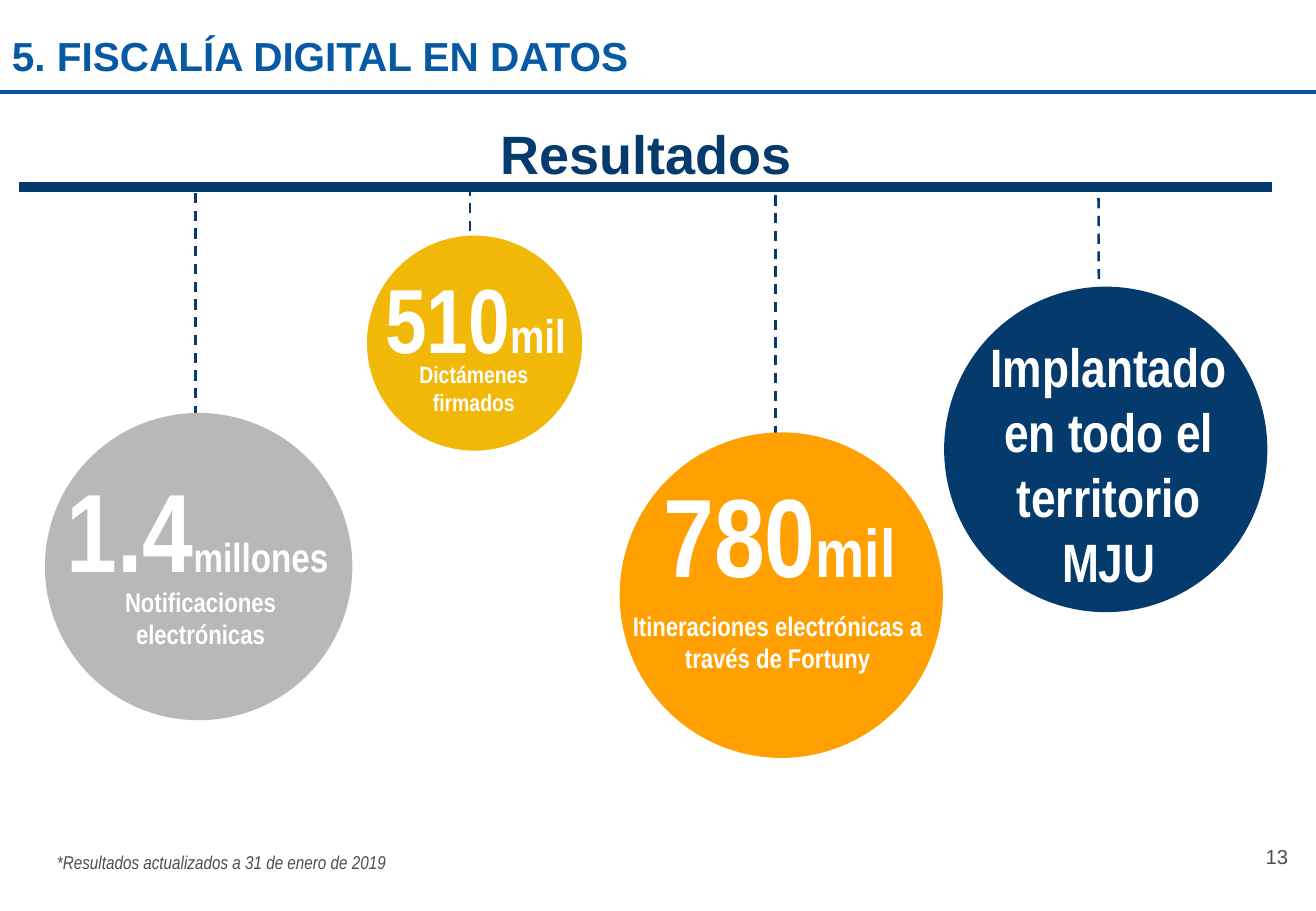
from lxml import etree
from pptx import Presentation
from pptx.dml.color import RGBColor
from pptx.enum.dml import MSO_LINE
from pptx.enum.shapes import MSO_CONNECTOR, MSO_SHAPE
from pptx.enum.text import PP_ALIGN
from pptx.oxml.ns import qn
from pptx.util import Pt

EMU_PER_PX = 9144
STRAIGHT = MSO_CONNECTOR.STRAIGHT
ELLIPSE = MSO_SHAPE.OVAL
DASH = MSO_LINE.DASH
LEFT, CENTER, RIGHT = PP_ALIGN.LEFT, PP_ALIGN.CENTER, PP_ALIGN.RIGHT

BLUE, NAVY, WHITE, DARK_GRAY = "0759A3", "043A6C", "FFFFFF", "4E4E4E"
GRAY, YELLOW, ORANGE = "B8B8B8", "F2B808", "FF9F00"
NARROW = "Arial Narrow"

RESULTS = [
    {
        "cord": (161, 474, 161, 152),
        "circle": (37, 340, 253, 253),
        "color": GRAY,
        "texts": [
            ((27, 375, 271, 121), [("1.4", 66), ("millones", 24)]),
            ((44, 477, 242, 64), [("Notificaciones electrónicas", 16)]),
        ],
    },
    {
        "cord": (387, 351, 387, 151),
        "circle": (302, 194, 177, 177),
        "color": YELLOW,
        "texts": [
            ((250, 211, 283, 101), [("510", 54), ("mil", 28)]),
            ((327, 291, 126, 57), [("Dictámenes firmados", 14)]),
        ],
    },
    {
        "cord": (905, 449, 904, 154),
        "circle": (777, 236, 266, 268),
        "color": NAVY,
        "texts": [
            ((793, 270, 239, 172), [("Implantado en todo el territorio MJU", 32)]),
        ],
    },
    {
        "cord": (638, 476, 638, 154),
        "circle": (510, 356, 266, 268),
        "color": ORANGE,
        "texts": [
            ((507, 497, 266, 110), [("Itineraciones electrónicas a través de Fortuny", 16)]),
            ((458, 379, 367, 147), [("780", 66), ("mil", 40)]),
        ],
    },
]


def px(*lengths):
    return [length * EMU_PER_PX for length in lengths]


def rgb(color):
    return RGBColor.from_string(color)


def add_line(slide, ends, color, width, dash=None):
    line = slide.shapes.add_connector(STRAIGHT, *px(*ends))
    line.line.color.rgb = rgb(color)
    line.line.width = Pt(width)
    if dash is not None:
        line.line.dash_style = dash
    etree.SubElement(line._element.spPr, qn("a:effectLst"))


def add_circle(slide, box, color):
    circle = slide.shapes.add_shape(ELLIPSE, *px(*box))
    circle.shadow.inherit = False
    circle.fill.solid()
    circle.fill.fore_color.rgb = rgb(color)
    circle.line.fill.background()


def add_text(slide, box, runs, *, color, font=NARROW, align=CENTER, bold=True, italic=False):
    text_frame = slide.shapes.add_textbox(*px(*box)).text_frame
    text_frame.word_wrap = True
    paragraph = text_frame.paragraphs[0]
    paragraph.alignment = align
    for text, size in runs:
        run = paragraph.add_run()
        run.text = text
        run.font.name = font
        run.font.size = Pt(size)
        run.font.bold = bold
        run.font.italic = italic
        run.font.color.rgb = rgb(color)


def add_result(slide, result):
    add_circle(slide, result["circle"], result["color"])
    for box, runs in result["texts"]:
        add_text(slide, box, runs, color=WHITE)


def main():
    presentation = Presentation()
    presentation.slide_width, presentation.slide_height = px(1083, 750)
    slide = presentation.slides.add_slide(presentation.slide_layouts[6])

    add_line(slide, (0, 76, 1083, 76), BLUE, 2.25)
    add_text(slide, (0, 21, 1083, 94), [("5. FISCALÍA DIGITAL EN DATOS", 24)],
             color=BLUE, font="Arial", align=LEFT)

    for result in RESULTS:
        add_line(slide, result["cord"], NAVY, 1.5, DASH)
    add_line(slide, (16, 154, 1047, 154), NAVY, 6)
    add_text(slide, (16, 94, 1031, 64), [("Resultados", 32)], color=NAVY, font="Arial")
    for result in RESULTS:
        add_result(slide, result)

    add_text(slide, (37, 696, 295, 29), [("*Resultados actualizados a 31 de enero de 2019", 11)],
             color=DARK_GRAY, align=LEFT, bold=False, italic=True)
    add_text(slide, (817, 690, 253, 40), [("13", 12)],
             color=DARK_GRAY, font="Arial", align=RIGHT, bold=False)

    presentation.save("out.pptx")


if __name__ == "__main__":
    main()
